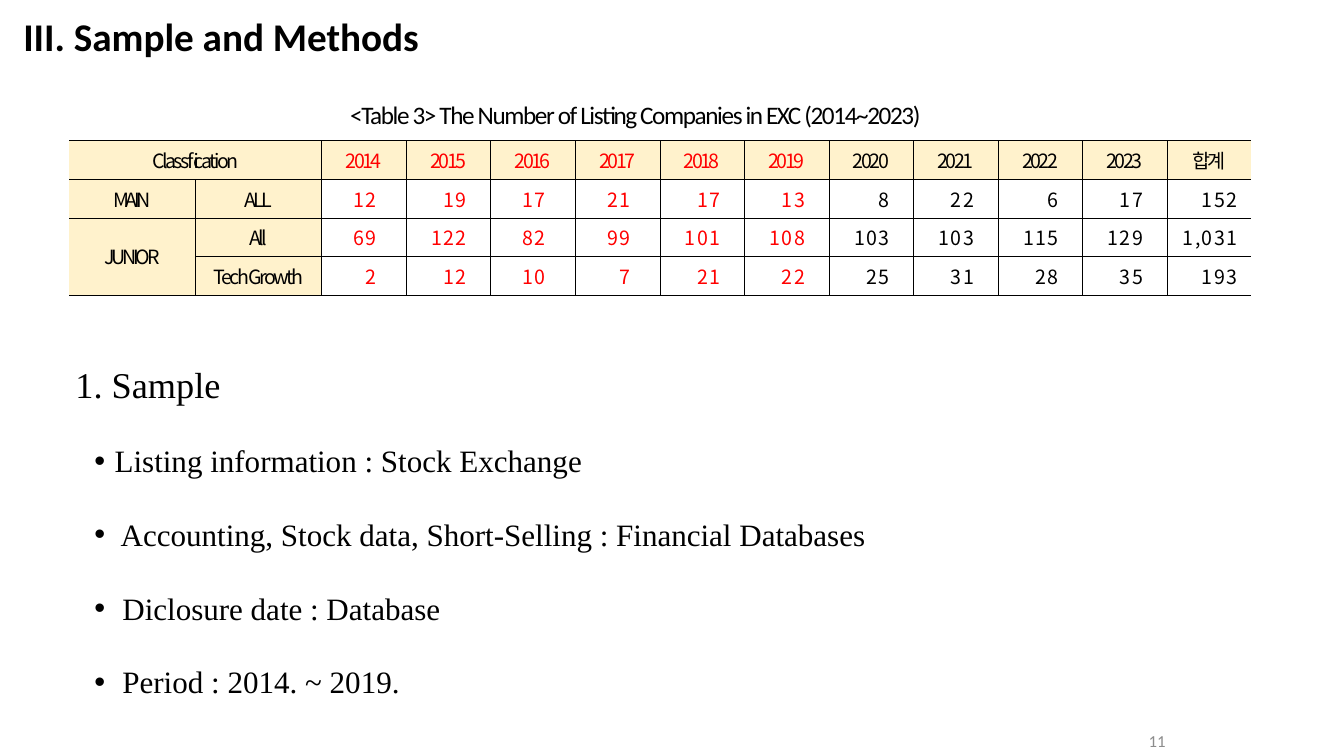
"""Build the Sample and Methods slide with its listing table."""
from lxml import etree
from pptx import Presentation
from pptx.dml.color import RGBColor
from pptx.enum.text import MSO_ANCHOR, PP_ALIGN
from pptx.oxml.ns import qn
from pptx.util import Pt

LEFT, CENTER, RIGHT = PP_ALIGN.LEFT, PP_ALIGN.CENTER, PP_ALIGN.RIGHT
TOP, MIDDLE = MSO_ANCHOR.TOP, MSO_ANCHOR.MIDDLE
BLACK, RED, GRAY, CREAM = "000000", "FF0000", "8C8C8C", "FFF2CC"
CJK, SERIF, SANS = "Noto Sans CJK KR", "Times New Roman", "Calibri"


def rgb(color):
    return RGBColor.from_string(color)


def write(p, text, color, spacing=0, align=LEFT, **font):
    p.alignment = align
    r = p.add_run()
    r.text = text
    for name, value in font.items():
        setattr(r.font, name, value)
    r.font.color.rgb = rgb(color)
    rPr = r.font._element
    if spacing:
        rPr.set("spc", str(round(spacing * 100)))
    etree.SubElement(rPr, qn("a:ea"), typeface=font["name"])


prs = Presentation()
prs.slide_width, prs.slide_height = Pt(960), Pt(540)
s = prs.slides.add_slide(prs.slide_layouts[5])

title = s.shapes.title
title.left, title.top, title.width, title.height = Pt(9.4), Pt(8), Pt(644), Pt(39.6)
title.text_frame.vertical_anchor = MIDDLE
p = title.text_frame.paragraphs[0]
p.line_spacing = 0.9
write(p, "III. Sample and Methods", BLACK, name=SANS, size=Pt(28), bold=True)

frames = []
for box, anchor in [
    ((46.8, 236.2, 853, 260.6), TOP),
    ((671.8, 517.7, 167.8, 22.3), MIDDLE),
    ((213.8, 67.7, 480, 28.8), TOP),
]:
    tf = s.shapes.add_textbox(*map(Pt, box)).text_frame
    tf.word_wrap = True
    tf.vertical_anchor = anchor
    frames.append(tf)
body, number, caption = frames

write(number.paragraphs[0], "11", GRAY, align=RIGHT, name=SANS, size=Pt(12))
write(caption.paragraphs[0], "<Table 3> The Number of Listing Companies in EXC (2014~2023)",
      BLACK, -1, CENTER, name=SANS, size=Pt(18))

sample_lines = [
    "1. Sample",
    "Listing information : Stock Exchange",
    " Accounting, Stock data, Short-Selling : Financial Databases",
    " Diclosure date : Database",
    " Period : 2014. ~ 2019.",
]
for i, line in enumerate(sample_lines):
    p = body.add_paragraph() if i else body.paragraphs[0]
    p.line_spacing, p.space_before = 1.6, Pt(10)
    write(p, line, BLACK, name=SERIF, size=Pt(22.2 if i else 25.9))
    margin, indent = (28, -14.4) if i else (36, -36)
    pPr = p._p.get_or_add_pPr()
    pPr.set("marL", str(Pt(margin)))
    pPr.set("indent", str(Pt(indent)))
    if i:
        etree.SubElement(pPr, qn("a:buFont"), typeface="Arial")
        etree.SubElement(pPr, qn("a:buChar"), char="•")

rows = [
    ["Classfication", "", *map(str, range(2014, 2024)), "합계"],
    ["MAIN", "ALL", 12, 19, 17, 21, 17, 13, 8, 22, 6, 17, 152],
    ["JUNIOR", "All", 69, 122, 82, 99, 101, 108, 103, 103, 115, 129, 1031],
    ["", "Tech Growth", 2, 12, 10, 7, 21, 22, 25, 31, 28, 35, 193],
]
right_margins = [0, 0, 21, 17, 21, 21, 17, 17, 17, 17, 17, 17, 10]
last = len(right_margins) - 1
table = s.shapes.add_table(len(rows), last + 1, Pt(49.3), Pt(100.4), Pt(844.6), Pt(110.4)).table
table.first_row = table.horz_banding = False
for c, col in enumerate(table.columns):
    col.width = Pt(90.2 if c < 2 else 60.38)
for row in table.rows:
    row.height = Pt(27.6)

for r, values in enumerate(rows):
    for c, value in enumerate(values):
        cell = table.cell(r, c)
        cell.vertical_anchor = MIDDLE
        tcPr = cell._tc.get_or_add_tcPr()
        for side in "LRTB":
            ln = etree.SubElement(tcPr, qn("a:ln" + side), w=str(Pt(0.28)))
            if (side, c) in (("L", 0), ("R", last)):
                etree.SubElement(ln, qn("a:noFill"))
            else:
                fill = etree.SubElement(ln, qn("a:solidFill"))
                etree.SubElement(fill, qn("a:srgbClr"), val=BLACK)
        if r == 0 or c < 2:
            cell.fill.solid()
            cell.fill.fore_color.rgb = rgb(CREAM)
            align, spacing = CENTER, -2.4 if r and c == 0 else -1.8
        else:
            cell.fill.background()
            cell.margin_left, cell.margin_right = 0, Pt(right_margins[c])
            align, spacing = RIGHT, 1
        if value:
            text = value if isinstance(value, str) else f"{value:,}"
            write(cell.text_frame.paragraphs[0], text, RED if 2 <= c <= 7 else BLACK,
                  spacing, align, name=CJK, size=Pt(14))
table.cell(0, 0).merge(table.cell(0, 1))
table.cell(2, 0).merge(table.cell(3, 0))

prs.save("out.pptx")
